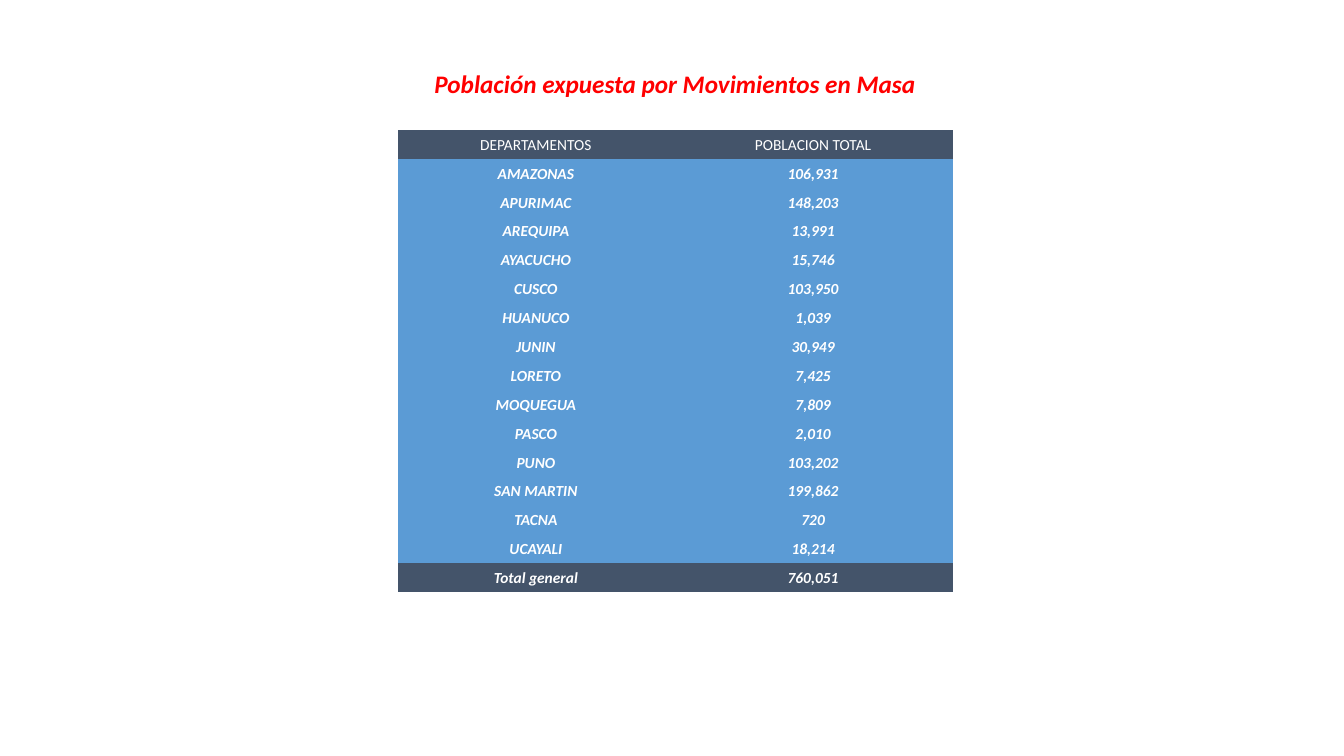
"""Build a slide with a table of population exposed to mass movements."""
from pptx import Presentation
from pptx import util as u
from pptx.dml.color import RGBColor
from pptx.enum import text
from pptx.oxml import ns

TITLE = "Población expuesta por Movimientos en Masa"
HEADER = ("DEPARTAMENTOS", "POBLACION TOTAL")
POPULATION = [
    ("AMAZONAS", 106931),
    ("APURIMAC", 148203),
    ("AREQUIPA", 13991),
    ("AYACUCHO", 15746),
    ("CUSCO", 103950),
    ("HUANUCO", 1039),
    ("JUNIN", 30949),
    ("LORETO", 7425),
    ("MOQUEGUA", 7809),
    ("PASCO", 2010),
    ("PUNO", 103202),
    ("SAN MARTIN", 199862),
    ("TACNA", 720),
    ("UCAYALI", 18214),
]
TOTAL_LABEL = "Total general"

FONT = "Calibri"
RED = RGBColor(0xFF, 0x00, 0x00)
WHITE = RGBColor(0xFF, 0xFF, 0xFF)
SLATE = RGBColor(0x44, 0x54, 0x6A)
BLUE = RGBColor(0x5B, 0x9B, 0xD5)
NO_STYLE = "{2D5ABB26-0587-4C30-8999-92F81FD0307C}"

LEFT, TOP, HEIGHT = 3.95, 1.29, 4.59
COL_WIDTHS = (2.73, 2.77)
INSET = 0.01


def write(tf, content, size, color, strong):
    tf.text = content
    p = tf.paragraphs[0]
    p.alignment = text.PP_ALIGN.CENTER
    f = p.runs[0].font
    f.name, f.size = FONT, u.Pt(size)
    f.bold = f.italic = strong
    f.color.rgb = color


def add_title(s):
    sp = s.shapes.add_textbox(u.Inches(4.18), u.Inches(0.63), u.Inches(5.03), u.Inches(0.4))
    tf = sp.text_frame
    write(tf, TITLE, 18, RED, True)
    tf.word_wrap = False
    tf.auto_size = text.MSO_AUTO_SIZE.SHAPE_TO_FIT_TEXT


def add_population_table(s):
    total = sum(count for _, count in POPULATION)
    body = [(name, f"{count:,}") for name, count in POPULATION + [(TOTAL_LABEL, total)]]
    rows = [HEADER] + body
    last = len(rows) - 1
    frame = s.shapes.add_table(len(rows), len(HEADER), u.Inches(LEFT), u.Inches(TOP),
                               u.Inches(sum(COL_WIDTHS)), u.Inches(HEIGHT))
    table = frame.table
    table.first_row = table.horz_banding = False
    next(frame.element.iter(ns.qn("a:tableStyleId"))).text = NO_STYLE
    for column, width in zip(table.columns, COL_WIDTHS):
        column.width = u.Inches(width)
    for i, row in enumerate(rows):
        table.rows[i].height = u.Inches(HEIGHT / len(rows))
        for j, content in enumerate(row):
            cell = table.cell(i, j)
            cell.margin_left = cell.margin_right = cell.margin_top = u.Inches(INSET)
            cell.margin_bottom = 0
            cell.vertical_anchor = text.MSO_ANCHOR.MIDDLE
            cell.fill.solid()
            cell.fill.fore_color.rgb = SLATE if i in (0, last) else BLUE
            write(cell.text_frame, content, 11, WHITE, i > 0)


def main():
    prs = Presentation()
    prs.slide_width, prs.slide_height = u.Inches(13.33), u.Inches(7.5)
    s = prs.slides.add_slide(prs.slide_layouts[6])
    add_title(s)
    add_population_table(s)
    prs.save("out.pptx")


if __name__ == "__main__":
    main()
